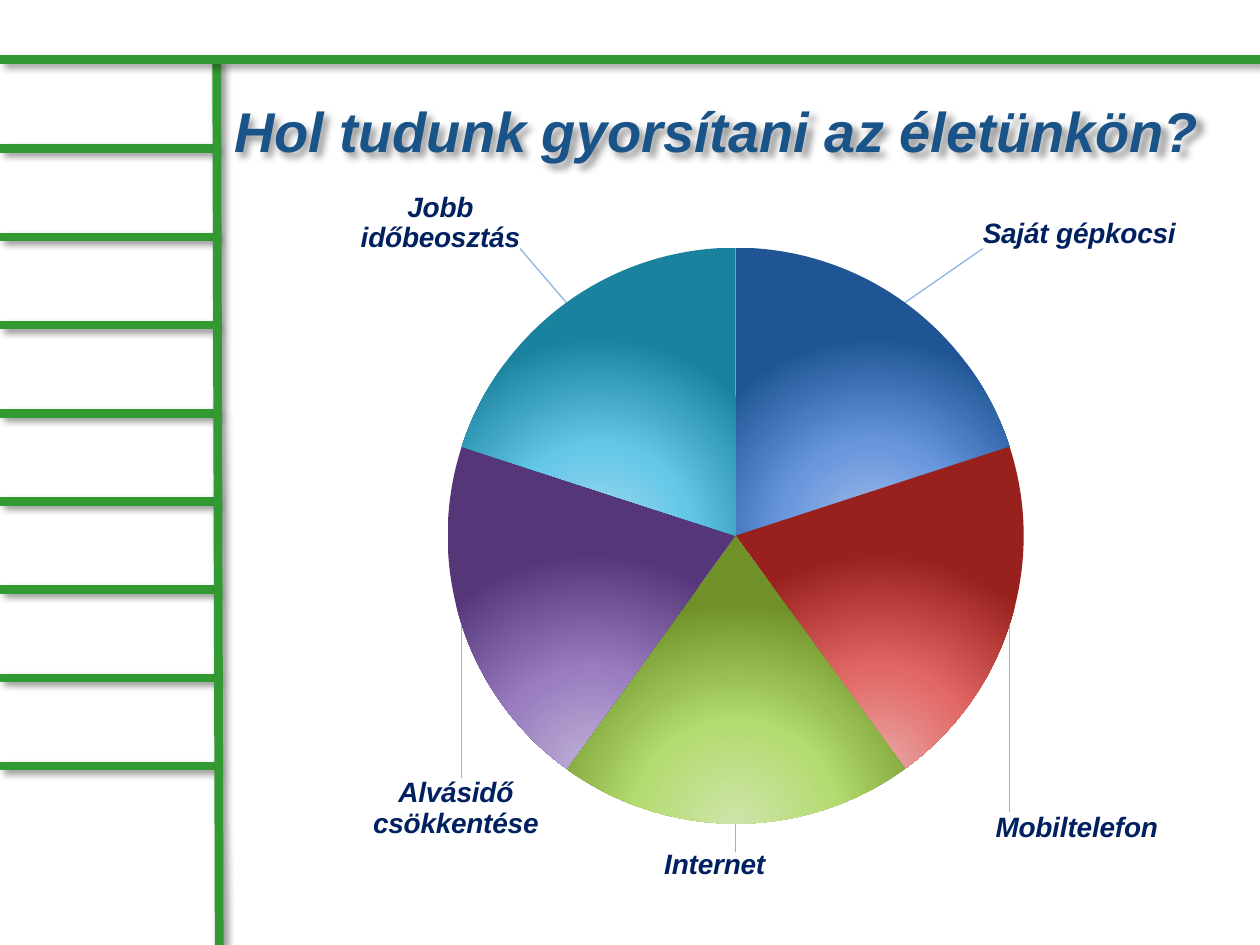
from pptx import Presentation
from pptx.chart.data import CategoryChartData as ChartData
from pptx.dml.color import RGBColor
from pptx.enum.chart import XL_CHART_TYPE as ChartType
from pptx.enum.shapes import MSO_CONNECTOR as Connector
from pptx.enum.text import MSO_ANCHOR as Anchor, PP_ALIGN as Align
from pptx.oxml import parse_xml
from pptx.oxml.ns import nsdecls
from pptx.util import Inches, Pt

SLICES = [
    ("Saját gépkocsi", ("A7BDE7", "6897DE", "1F5595"), (0.07, -0.07)),
    ("Mobiltelefon", ("E9A7A6", "E26866", "98201D"), (-0.02, 0.27)),
    ("Internet", ("CDE5AA", "B3DB6F", "6F9128"), (-0.02, 0.03)),
    ("Alvásidő csökkentése", ("BFB1D5", "997DC0", "553779"), (0.08, 0.22)),
    ("Jobb időbeosztás", ("A4D8ED", "63C7E8", "1A829E"), (-0.04, -0.07)),
]


def color(value):
    """Return the colour for a hex string."""
    return RGBColor.from_string(value)


def style_font(font, size, value):
    """Apply the bold italic Arial shared by all the text."""
    font.name = "Arial"
    font.size = Pt(size)
    font.bold = font.italic = True
    font.color.rgb = color(value)


def add_shadow(shape):
    """Give a shape a soft shadow to the lower right."""
    shape._element.spPr.append(parse_xml(
        f'<a:effectLst {nsdecls("a")}><a:outerShdw blurRad="{Pt(4)}" '
        f'dist="{Pt(3)}" dir="2700000" algn="tl" rotWithShape="0">'
        '<a:srgbClr val="000000"><a:alpha val="40000"/></a:srgbClr>'
        '</a:outerShdw></a:effectLst>'))


def add_bar(page, *ends):
    """Draw one green bar between two points."""
    bar = page.shapes.add_connector(Connector.STRAIGHT, *map(Inches, ends))
    bar.line.color.rgb = color("339933")
    bar.line.width = Pt(5)
    add_shadow(bar)


def add_ladder(page, left, top, width, height):
    """Draw the rungs, the rail and the top bar of the background."""
    rail = left + 1.72
    for rung in range(8, 0, -1):
        level = top + 0.7 * rung + 0.01
        add_bar(page, left, level, rail, level)
    add_bar(page, rail, top, rail + 0.02, top + height)
    add_bar(page, left, top, left + width, top)


def add_title(page, left, top, width, height):
    """Place and format the slide title."""
    title = page.shapes.title
    title.left, title.top = Inches(left), Inches(top)
    title.width, title.height = Inches(width), Inches(height)
    frame = title.text_frame
    frame.vertical_anchor = Anchor.MIDDLE
    frame.word_wrap = True
    para = frame.paragraphs[0]
    para.alignment = Align.LEFT
    span = para.add_run()
    span.text = "Hol tudunk gyorsítani az életünkön?"
    style_font(span.font, 32, "195387")
    add_shadow(title)


def radial_fill(colors):
    """Return a circular gradient centred below the slice."""
    stops = "".join(
        f'<a:gs pos="{place}"><a:srgbClr val="{value}"/></a:gs>'
        for place, value in zip((0, 46000, 100000), colors))
    return parse_xml(
        f'<a:gradFill {nsdecls("a")} rotWithShape="1"><a:gsLst>{stops}</a:gsLst>'
        '<a:path path="circle"><a:fillToRect l="50000" t="155000" r="50000" '
        'b="-55000"/></a:path></a:gradFill>')


def manual_layout(**values):
    """Return a manual chart layout with the given entries."""
    entries = "".join(f'<c:{key} val="{value}"/>' for key, value in values.items())
    return parse_xml(f'<c:layout {nsdecls("c")}><c:manualLayout>{entries}'
                     '</c:manualLayout></c:layout>')


def moved_label(index, shift):
    """Return a category label moved from its usual place."""
    label = parse_xml(
        f'<c:dLbl {nsdecls("c")}><c:idx val="{index}"/><c:dLblPos val="outEnd"/>'
        '<c:showLegendKey val="0"/><c:showVal val="0"/><c:showCatName val="1"/>'
        '<c:showSerName val="0"/><c:showPercent val="0"/>'
        '<c:showBubbleSize val="0"/></c:dLbl>')
    label.insert(1, manual_layout(x=shift[0], y=shift[1]))
    return label


def add_pie(page, left, top, width, height):
    """Add the pie of five equal slices with labels on leader lines."""
    data = ChartData()
    data.categories = [name for name, _, _ in SLICES]
    data.add_series("Series 1", [20] * len(SLICES))
    chart = page.shapes.add_chart(
        ChartType.PIE, *map(Inches, (left, top, width, height)), data).chart
    chart.has_legend = chart.has_title = False
    chart.font.name = "Arial"
    chart.font.size = Pt(10)
    chart.font.color.rgb = color("1F497D")
    plot = chart.plots[0]
    plot.vary_by_categories = True

    area = chart._chartSpace.chart.plotArea
    for old in area.xpath("c:layout"):
        area.remove(old)
    area.insert(0, manual_layout(layoutTarget="inner", xMode="edge", yMode="edge",
                                 x=0.226, y=0.08, w=0.549, h=0.839))

    series = plot.series[0]
    labels = series.data_labels
    style_font(labels.font, 16, "002060")
    labels.show_value = False
    labels.show_category_name = True
    block = labels._element
    for old in block.xpath("c:showLeaderLines | c:leaderLines"):
        block.remove(old)
    block.append(parse_xml(f'<c:showLeaderLines {nsdecls("c")} val="1"/>'))
    block.append(parse_xml(
        f'<c:leaderLines {nsdecls("c", "a")}><c:spPr><a:ln w="{Pt(0.75)}"><a:solidFill>'
        '<a:srgbClr val="8EB4E3"/></a:solidFill></a:ln></c:spPr></c:leaderLines>'))
    for index, (_, colors, shift) in enumerate(SLICES):
        point = series._element.get_or_add_dPt_for_point(index)
        point.get_or_add_spPr().insert(0, radial_fill(colors))
        block.insert(index, moved_label(index, shift))


def main():
    """Build and save the deck."""
    deck = Presentation()
    deck.slide_width, deck.slide_height = Inches(10), Inches(7.5)
    page = deck.slides.add_slide(deck.slide_layouts[5])
    add_ladder(page, 0, 0.47, 10, 7.03)
    add_title(page, 1.76, 0.68, 8.23, 0.71)
    add_pie(page, 1.67, 1.53, 8.33, 5.45)
    deck.save("out.pptx")


if __name__ == "__main__":
    main()
